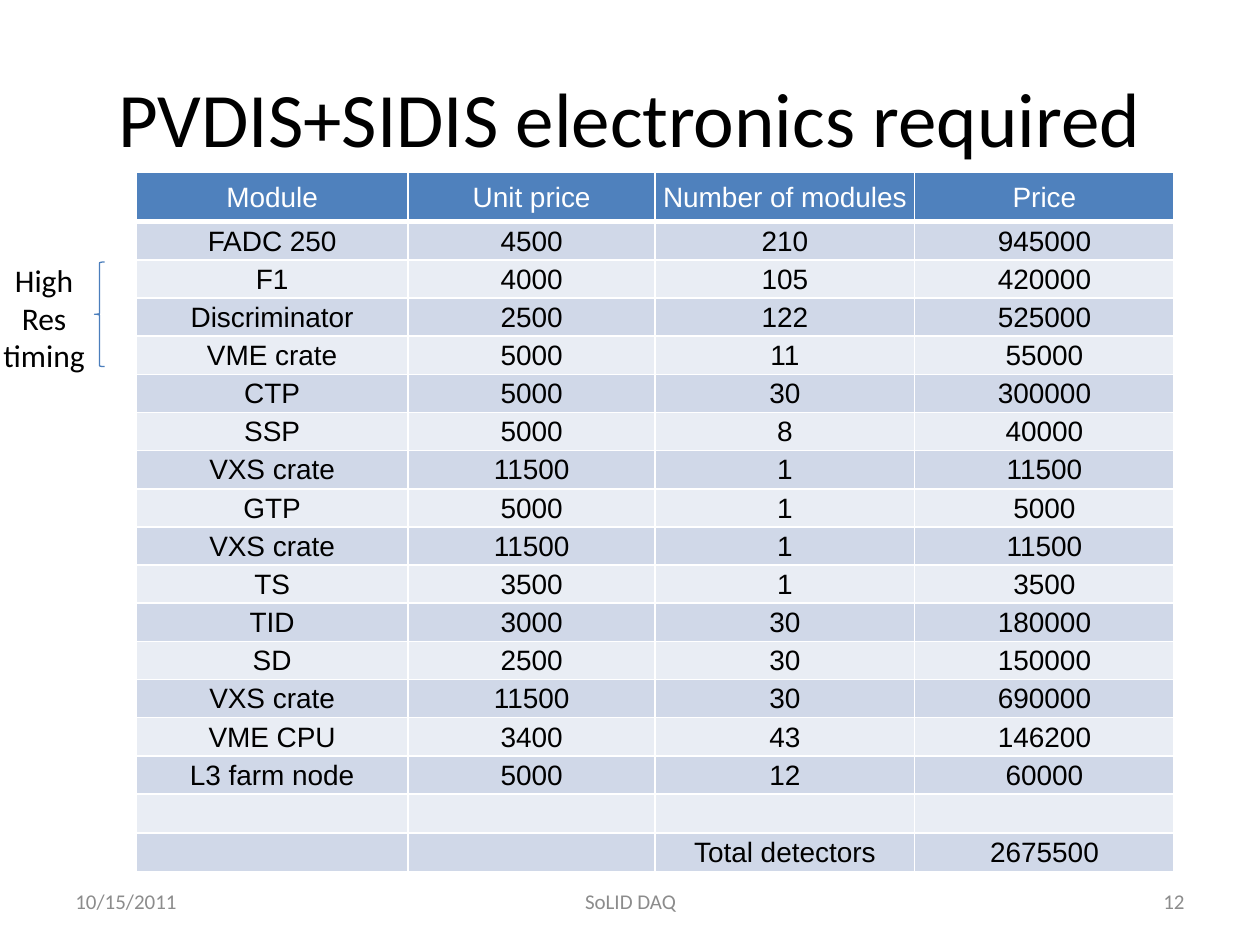
"""Build the slide listing the electronics needed for PVDIS and SIDIS."""
import dataclasses

import pptx
import pptx.dml.color
import pptx.enum.shapes
import pptx.enum.text
import pptx.oxml
import pptx.oxml.ns
import pptx.util

Inches = pptx.util.Inches
Pt = pptx.util.Pt
ALIGN = pptx.enum.text.PP_ALIGN
MIDDLE = pptx.enum.text.MSO_ANCHOR.MIDDLE
TOP = pptx.enum.text.MSO_ANCHOR.TOP


@dataclasses.dataclass(frozen=True)
class Theme:
    """Colours, fonts and type sizes of the slide."""
    text: str = "000000"
    muted: str = "8C8C8C"
    header: str = "4F81BD"
    white: str = "FFFFFF"
    bands: tuple = ("D0D8E8", "E9EDF4")
    brace: str = "4B7EBC"
    text_font: str = "Calibri"
    table_font: str = "Arial"
    title_size: int = 44
    label_size: int = 18
    table_size: int = 16
    footer_size: int = 12
    rule: int = 1
    header_rule: int = 3


THEME = Theme()

TITLE = "PVDIS+SIDIS electronics required"
TIMING_LABEL = ("High", "Res", "timing")
HEADINGS = ("Module", "Unit price", "Number of modules", "Price")
MODULES = [
    ("FADC 250", "4500", "210", "945000"),
    ("F1", "4000", "105", "420000"),
    ("Discriminator", "2500", "122", "525000"),
    ("VME crate", "5000", "11", "55000"),
    ("CTP", "5000", "30", "300000"),
    ("SSP", "5000", "8", "40000"),
    ("VXS crate", "11500", "1", "11500"),
    ("GTP", "5000", "1", "5000"),
    ("VXS crate", "11500", "1", "11500"),
    ("TS", "3500", "1", "3500"),
    ("TID", "3000", "30", "180000"),
    ("SD", "2500", "30", "150000"),
    ("VXS crate", "11500", "30", "690000"),
    ("VME CPU", "3400", "43", "146200"),
    ("L3 farm node", "5000", "12", "60000"),
    ("", "", "", ""),
    ("", "", "Total detectors", "2675500"),
]
FOOTERS = [
    ("10/15/2011", 0.5, 2.33, ALIGN.LEFT),
    ("SoLID DAQ", 3.42, 3.17, ALIGN.CENTER),
    ("12", 7.17, 2.33, ALIGN.RIGHT),
]

TABLE_BOX = (1.08, 1.37, 8.25, 5.54)
COLUMN_WIDTHS = (2.16, 1.96, 2.06, 2.06)
HEADER_HEIGHT = 0.39
CELL_FORMAT = {
    "vertical_anchor": MIDDLE,
    "margin_left": Inches(0.01),
    "margin_right": Inches(0.01),
    "margin_top": Inches(0.01),
    "margin_bottom": 0,
}


def rgb(colour):
    """Return a colour object for a hex string."""
    return pptx.dml.color.RGBColor.from_string(colour)


def apply_format(target, values):
    """Set each named attribute of the target."""
    for name, value in values.items():
        setattr(target, name, value)


def write(frame, lines, font, size, colour, align):
    """Write one formatted paragraph per line."""
    frame.text = "\n".join(lines)
    for paragraph in frame.paragraphs:
        paragraph.alignment = align
        for run in paragraph.runs:
            apply_format(run.font, {"name": font, "size": Pt(size)})
            run.font.color.rgb = rgb(colour)


def add_text(slide, box, lines, size, colour, align, frame_format):
    """Add a text box in the text font."""
    frame = slide.shapes.add_textbox(*map(Inches, box)).text_frame
    write(frame, lines, THEME.text_font, size, colour, align)
    apply_format(frame, frame_format)


def rule_cell(cell, widths):
    """Draw the four borders of a cell."""
    properties = cell._tc.get_or_add_tcPr()
    for side, width in widths.items():
        properties.append(pptx.oxml.parse_xml(
            f'<a:ln{side} {pptx.oxml.ns.nsdecls("a")} w="{Pt(width)}"><a:solidFill>'
            f'<a:srgbClr val="{THEME.white}"/></a:solidFill></a:ln{side}>'))


def add_price_table(slide):
    """Add the module price table with banded rows."""
    rows = [HEADINGS, *MODULES]
    table = slide.shapes.add_table(
        len(rows), len(HEADINGS), *map(Inches, TABLE_BOX)).table
    for column, width in zip(table.columns, COLUMN_WIDTHS):
        column.width = Inches(width)
    body_height = (TABLE_BOX[3] - HEADER_HEIGHT) / len(MODULES)
    for r, entries in enumerate(rows):
        is_header = r == 0
        table.rows[r].height = Inches(HEADER_HEIGHT if is_header else body_height)
        fill = THEME.header if is_header else THEME.bands[(r - 1) % 2]
        colour = THEME.white if is_header else THEME.text
        widths = dict.fromkeys("LRTB", THEME.rule)
        if r < 2:
            widths["B" if is_header else "T"] = THEME.header_rule
        for c, entry in enumerate(entries):
            cell = table.cell(r, c)
            apply_format(cell, CELL_FORMAT)
            rule_cell(cell, widths)
            cell.fill.solid()
            cell.fill.fore_color.rgb = rgb(fill)
            write(cell.text_frame, [entry], THEME.table_font,
                  THEME.table_size, colour, ALIGN.CENTER)


def add_timing_brace(slide):
    """Add the brace beside the high resolution timing rows."""
    brace = slide.shapes.add_shape(
        pptx.enum.shapes.MSO_SHAPE.LEFT_BRACE,
        *map(Inches, (0.75, 2.08, 0.08, 0.83)))
    brace.shadow.inherit = False
    brace.fill.background()
    brace.line.color.rgb = rgb(THEME.brace)
    brace.line.width = Pt(0.75)


def main():
    """Build and save the slide."""
    deck = pptx.Presentation()
    apply_format(deck, {"slide_width": Inches(10), "slide_height": Inches(7.5)})
    slide = deck.slides.add_slide(deck.slide_layouts[6])
    centred = {"word_wrap": True, "vertical_anchor": MIDDLE}
    fitted = {"word_wrap": False, "vertical_anchor": TOP,
              "auto_size": pptx.enum.text.MSO_AUTO_SIZE.SHAPE_TO_FIT_TEXT}
    add_text(slide, (0.5, 0.3, 9, 1.25), [TITLE], THEME.title_size,
             THEME.text, ALIGN.CENTER, centred)
    add_price_table(slide)
    for footer, left, width, align in FOOTERS:
        add_text(slide, (left, 6.95, width, 0.4), [footer], THEME.footer_size,
                 THEME.muted, align, centred)
    add_timing_brace(slide)
    add_text(slide, (-0.08, 2.02, 0.86, 1.01), TIMING_LABEL, THEME.label_size,
             THEME.text, ALIGN.CENTER, fitted)
    deck.save("out.pptx")


if __name__ == "__main__":
    main()
